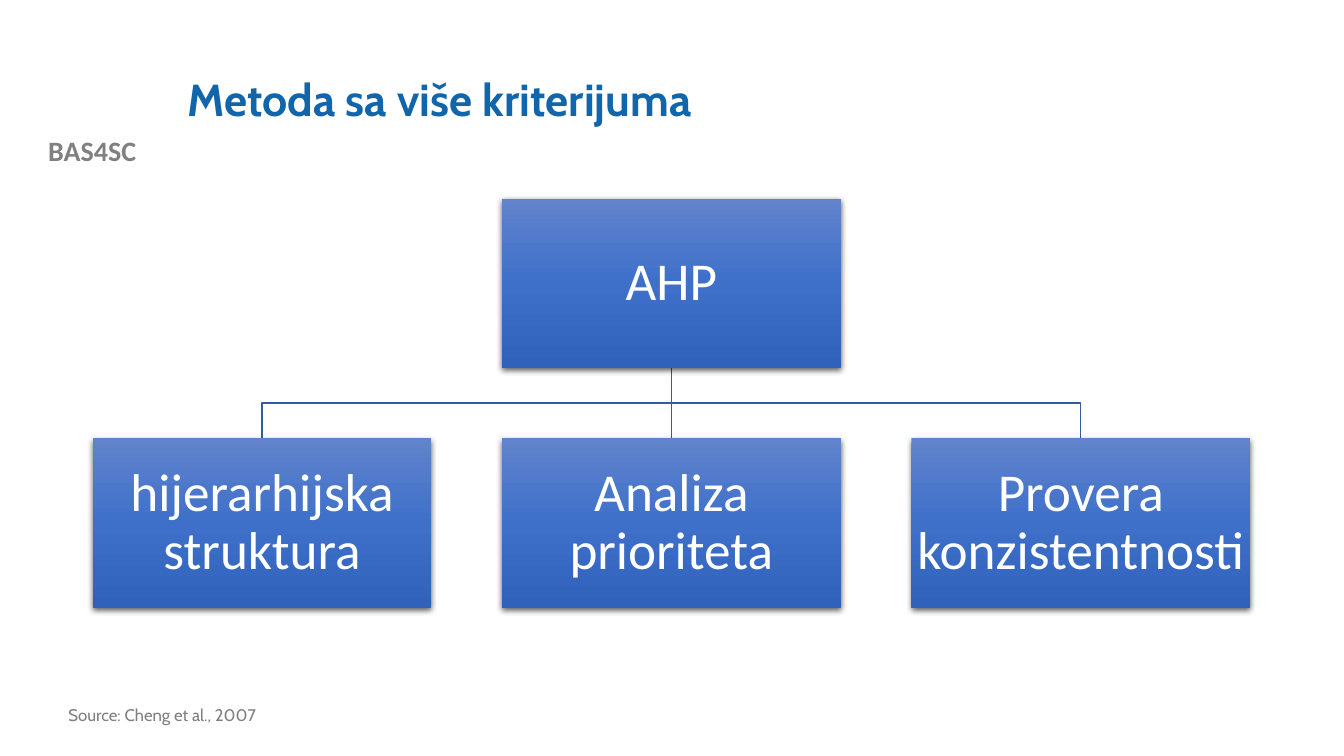
from copy import deepcopy

from lxml.etree import SubElement
from pptx import Presentation
from pptx.dml.color import RGBColor
from pptx.enum.shapes import MSO_CONNECTOR, MSO_SHAPE
from pptx.enum.text import MSO_ANCHOR, MSO_AUTO_SIZE, PP_ALIGN
from pptx.oxml.ns import qn
from pptx.util import Pt

PX = 9144  # 100 px to the inch
BLUE = RGBColor(0x10, 0x65, 0xAB)
GRAY = RGBColor(0x80, 0x80, 0x80)
NOTE = RGBColor(0x7F, 0x7F, 0x7F)
LINE = RGBColor(0x36, 0x5B, 0x9D)
WHITE = RGBColor(0xFF, 0xFF, 0xFF)
FADE = [
    (0, RGBColor(0x61, 0x83, 0xCB)),
    (0.5, RGBColor(0x3E, 0x70, 0xCA)),
    (1, RGBColor(0x30, 0x62, 0xBB)),
]

HEAD = dict(name="Cabin", size=Pt(32), bold=True, color=BLUE)
TAG = dict(name="Calibri", size=Pt(20), bold=True, color=GRAY)
CITE = dict(name="Cabin", size=Pt(12), bold=False, color=NOTE)
NODE = dict(name="Calibri", size=Pt(38), bold=False, color=WHITE)

BOX_W, BOX_H = 336, 168
GAP_X, GAP_Y = 70, 70
ROOT = "AHP"
LEAVES = ["hijerarhijska struktura", "Analiza prioriteta", "Provera konzistentnosti"]


def place(shape, box):
    for key, val in zip(("left", "top", "width", "height"), box):
        setattr(shape, key, val * PX)


def write(shape, text, style, align=PP_ALIGN.LEFT, anchor=MSO_ANCHOR.TOP, space=0.9):
    frame = shape.text_frame
    frame.text = text
    form = dict(word_wrap=True, auto_size=MSO_AUTO_SIZE.NONE, vertical_anchor=anchor)
    for key, val in form.items():
        setattr(frame, key, val)
    para = frame.paragraphs[0]
    para.alignment, para.line_spacing = align, space
    for key, val in style.items():
        if key == "color":
            para.font.color.rgb = val
        else:
            setattr(para.font, key, val)
    return frame


def label(slide, box, text, style, **form):
    shape = slide.shapes.add_textbox(0, 0, 0, 0)
    place(shape, box)
    write(shape, text, style, **form)


def title(slide, box, text):
    shape = slide.shapes.title
    place(shape, box)
    write(shape, text, HEAD, anchor=MSO_ANCHOR.MIDDLE)


def node(slide, x, y, text):
    shape = slide.shapes.add_shape(MSO_SHAPE.RECTANGLE, 0, 0, 0, 0)
    place(shape, (x, y, BOX_W, BOX_H))
    shape.line.fill.background()

    # Three-stop fade from top to bottom
    shape.fill.gradient()
    shape.fill.gradient_angle = 270
    stops = shape._element.spPr.find(".//" + qn("a:gsLst"))
    stops.append(deepcopy(stops[-1]))
    for stop, (pos, color) in zip(shape.fill.gradient_stops, FADE):
        stop.position, stop.color.rgb = pos, color

    # Soft shadow below
    shape.shadow.inherit = False
    effects = shape._element.spPr.find(qn("a:effectLst"))
    shade = SubElement(effects, qn("a:outerShdw"), blurRad="57150", dist="19050",
                       dir="5400000", algn="ctr", rotWithShape="0")
    black = SubElement(shade, qn("a:srgbClr"), val="000000")
    SubElement(black, qn("a:alpha"), val="63000")

    frame = write(shape, text, NODE, PP_ALIGN.CENTER, MSO_ANCHOR.MIDDLE)
    for side in ("left", "right", "top", "bottom"):
        setattr(frame, "margin_" + side, 3 * PX)


def link(slide, x1, y1, x2, y2):
    if x1 == x2:
        line = slide.shapes.add_connector(
            MSO_CONNECTOR.STRAIGHT, x1 * PX, y1 * PX, x2 * PX, y2 * PX)
        SubElement(line._element.spPr, qn("a:effectLst"))
    else:
        mid = (y1 + y2) // 2
        path = slide.shapes.build_freeform(x1, y1, scale=PX)
        path.add_line_segments([(x1, mid), (x2, mid), (x2, y2)], close=False)
        line = path.convert_to_shape()
        line.fill.background()
        line.shadow.inherit = False
    line.line.color.rgb = LINE
    line.line.width = Pt(1)


def tree(slide, x, y):
    """Root over the middle of a row of leaves, with x, y the top left."""
    step = BOX_W + GAP_X
    lefts = [x + i * step for i in range(len(LEAVES))]
    root_x = (lefts[0] + lefts[-1]) // 2
    row_y = y + BOX_H + GAP_Y
    half = BOX_W // 2
    for left in lefts:
        link(slide, root_x + half, y + BOX_H, left + half, row_y)
    node(slide, root_x, y, ROOT)
    for left, text in zip(lefts, LEAVES):
        node(slide, left, row_y, text)


def main():
    prs = Presentation()
    prs.slide_width, prs.slide_height = 1333 * PX, 750 * PX
    slide = prs.slides.add_slide(prs.slide_layouts[5])
    label(slide, (0, 128, 183, 44), "BAS4SC", TAG, align=PP_ALIGN.CENTER, space=1.0)
    title(slide, (176, 40, 1066, 122), "Metoda sa više kriterijuma")
    label(slide, (58, 696, 590, 35), "Source: Cheng et al., 2007", CITE)
    tree(slide, 92, 197)
    prs.save("out.pptx")


if __name__ == "__main__":
    main()
